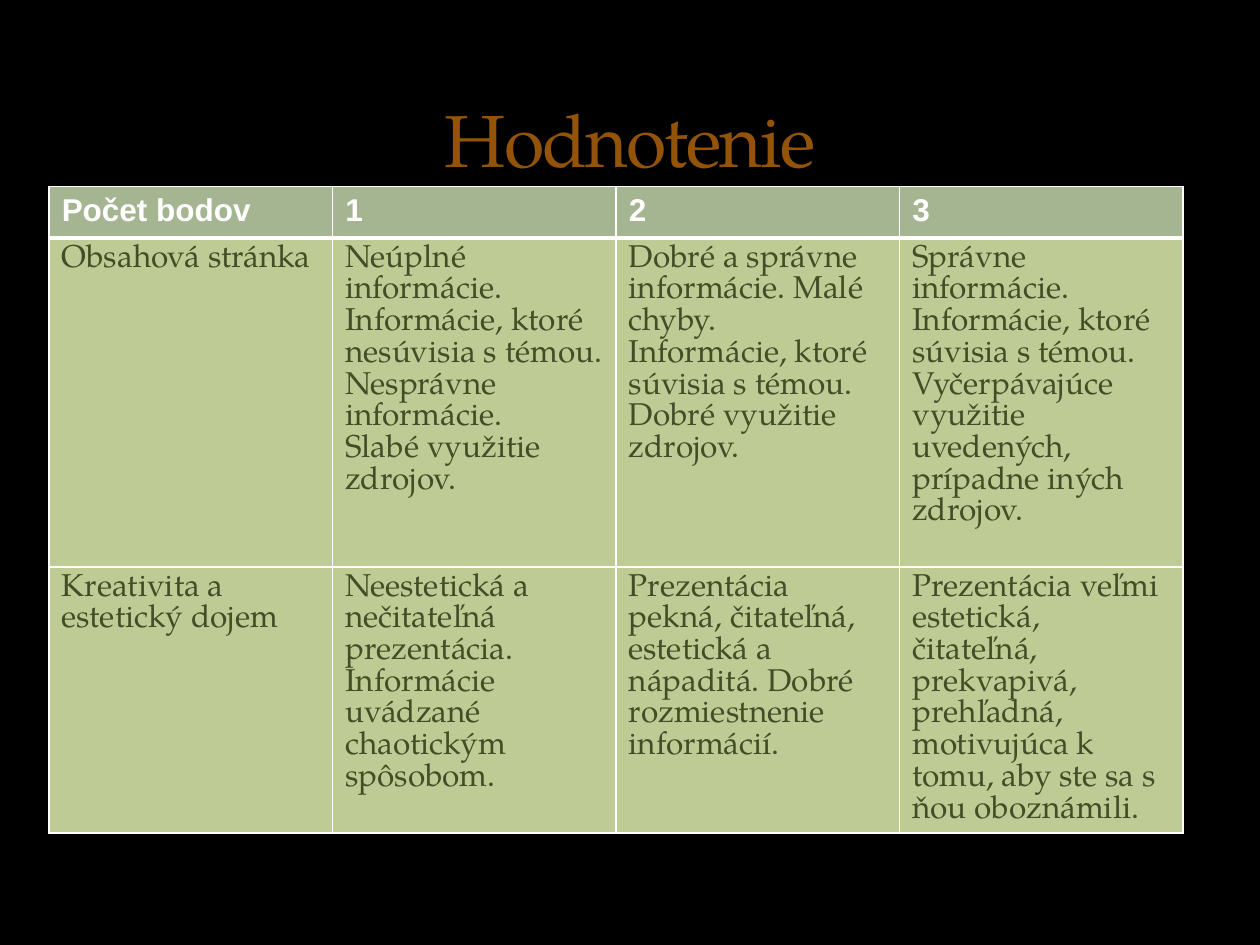
import pptx
import pptx.dml.color
import pptx.enum.text
import pptx.oxml
import pptx.oxml.ns
import pptx.util

RGBColor = pptx.dml.color.RGBColor
BLACK = RGBColor(0x00, 0x00, 0x00)
WHITE = RGBColor(0xFF, 0xFF, 0xFF)
BROWN = RGBColor(0x93, 0x54, 0x0A)
OLIVE = RGBColor(0x44, 0x4D, 0x26)
SAGE = RGBColor(0xA5, 0xB5, 0x92)
LIGHT_GREEN = RGBColor(0xBE, 0xCB, 0x95)

HEADINGS = ["Počet bodov", "1", "2", "3"]
# Each cell is a list of paragraphs
CRITERIA = [
    [
        ["Obsahová stránka"],
        ["Neúplné informácie.",
         "Informácie, ktoré nesúvisia s témou. Nesprávne informácie.",
         "Slabé využitie zdrojov."],
        ["Dobré a správne informácie. Malé chyby.",
         "Informácie, ktoré súvisia s témou. Dobré využitie zdrojov."],
        ["Správne informácie.",
         "Informácie, ktoré súvisia s témou.",
         "Vyčerpávajúce využitie uvedených, prípadne iných zdrojov."],
    ],
    [
        ["Kreativita a estetický dojem"],
        ["Neestetická a nečitateľná prezentácia.",
         "Informácie uvádzané chaotickým spôsobom."],
        ["Prezentácia pekná, čitateľná, estetická a nápaditá. "
         "Dobré rozmiestnenie informácií."],
        ["Prezentácia veľmi estetická, čitateľná, prekvapivá, prehľadná, "
         "motivujúca k tomu, aby ste sa s ňou oboznámili."],
    ],
]


class Deck:
    """Holds the style and the current slide; lengths are inches on a 10 x 7.5 grid."""

    heading_font = "Arial"
    text_font = "TeX Gyre Pagella"
    title_size = 42
    cell_size = 18
    thin, thick = 1, 3

    def __init__(self):
        self.presentation = pptx.Presentation()
        self.presentation.slide_width = pptx.util.Inches(10)
        self.presentation.slide_height = pptx.util.Inches(7.5)

    def add_slide(self, background):
        title_only = self.presentation.slide_layouts[5]
        self.slide = self.presentation.slides.add_slide(title_only)
        self.slide.background.fill.solid()
        self.slide.background.fill.fore_color.rgb = background

    def style(self, paragraph, font, size, color, bold=False):
        paragraph.font.name = font
        paragraph.font.size = pptx.util.Pt(size)
        paragraph.font.color.rgb = color
        paragraph.font.bold = bold

    def title(self, text, left, top, width, height):
        title = self.slide.shapes.title
        title.left, title.top, title.width, title.height = map(
            pptx.util.Inches, (left, top, width, height))
        title.text_frame.text = text
        title.text_frame.vertical_anchor = pptx.enum.text.MSO_ANCHOR.BOTTOM
        paragraph = title.text_frame.paragraphs[0]
        paragraph.alignment = pptx.enum.text.PP_ALIGN.CENTER
        self.style(paragraph, self.text_font, self.title_size, BROWN)
        # Tighten the letters by one point
        properties = paragraph._p.pPr.find(pptx.oxml.ns.qn("a:defRPr"))
        properties.set("spc", "-100")

    def borders(self, cell, top, bottom):
        properties = cell._tc.get_or_add_tcPr()
        widths = {"L": self.thin, "R": self.thin, "T": top, "B": bottom}
        for position, (side, width) in enumerate(widths.items()):
            line = pptx.oxml.parse_xml(
                f'<a:ln{side} {pptx.oxml.ns.nsdecls("a")} w="{pptx.util.Pt(width)}">'
                f'<a:solidFill><a:srgbClr val="{WHITE}"/></a:solidFill></a:ln{side}>')
            properties.insert(position, line)

    def cell(self, cell, paragraphs, fill, font, color, bold):
        cell.fill.solid()
        cell.fill.fore_color.rgb = fill
        cell.text_frame.text = "\n".join(paragraphs)
        for paragraph in cell.text_frame.paragraphs:
            self.style(paragraph, font, self.cell_size, color, bold)

    def table(self, headings, body, left, top, width, row_heights):
        rows = [[[heading] for heading in headings]] + body
        table = self.slide.shapes.add_table(
            len(rows), len(headings), *map(
                pptx.util.Inches, (left, top, width, sum(row_heights)))).table
        for row, height in zip(table.rows, row_heights):
            row.height = pptx.util.Inches(height)
        for r, row in enumerate(rows):
            if r == 0:
                look = (SAGE, self.heading_font, WHITE, True)
            else:
                look = (LIGHT_GREEN, self.text_font, OLIVE, False)
            for c, paragraphs in enumerate(row):
                self.cell(table.cell(r, c), paragraphs, *look)
                # The rule under the headings is heavier
                self.borders(table.cell(r, c),
                             top=self.thick if r == 1 else self.thin,
                             bottom=self.thick if r == 0 else self.thin)


def main():
    deck = Deck()
    deck.add_slide(BLACK)
    # Title
    deck.title("Hodnotenie", 0.5, 0.17, 9, 1.33)
    # Scoring table
    deck.table(HEADINGS, CRITERIA, 0.39, 1.48, 9, [0.41, 2.61, 2.11])
    deck.presentation.save("out.pptx")


if __name__ == "__main__":
    main()
